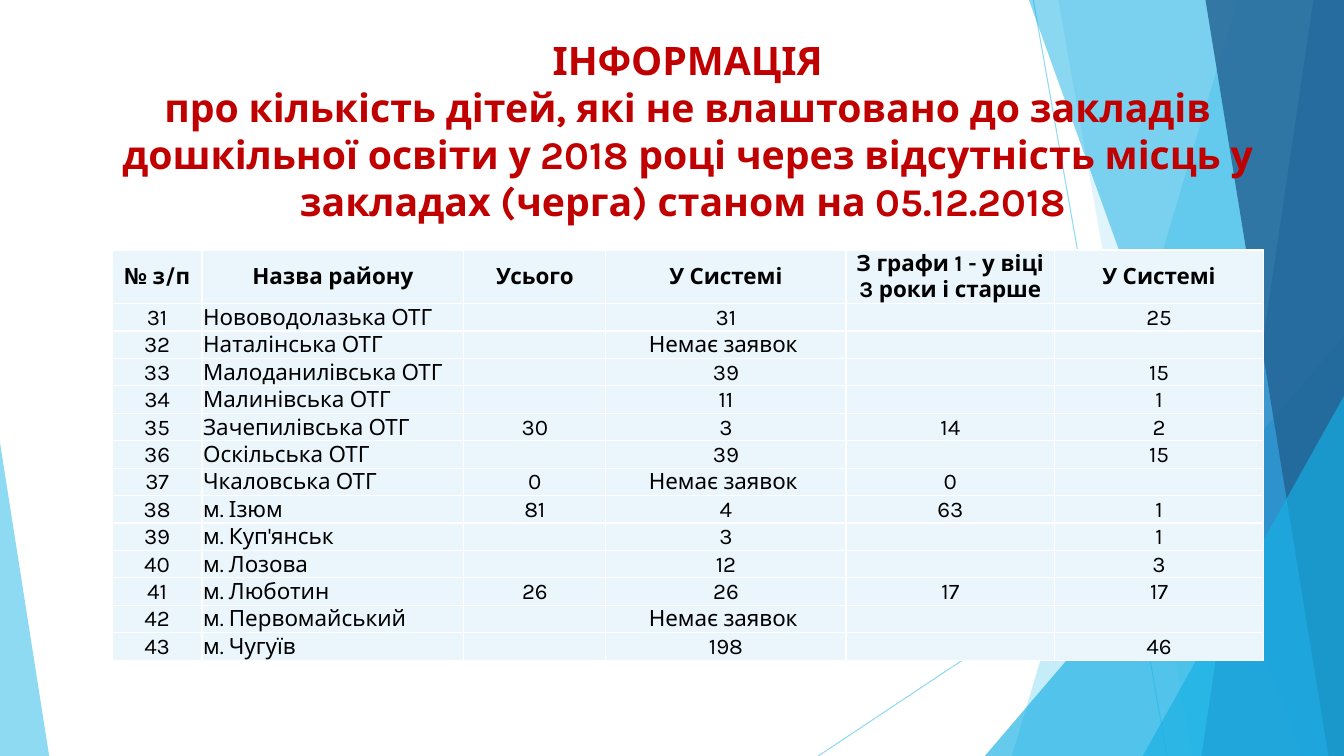
import pptx
import pptx.dml.color
import pptx.enum.shapes
import pptx.enum.text
import pptx.oxml
import pptx.oxml.ns
import pptx.util
from pptx.util import Cm

RGBColor = pptx.dml.color.RGBColor
PP_ALIGN = pptx.enum.text.PP_ALIGN
ANCHOR = pptx.enum.text.MSO_ANCHOR
qn = pptx.oxml.ns.qn

SKY = RGBColor(0x5F, 0xCB, 0xEF)
CYAN = RGBColor(0x17, 0xB0, 0xE4)
BLUE = RGBColor(0x2E, 0x83, 0xC3)
NAVY = RGBColor(0x22, 0x62, 0x92)
RED = RGBColor(0xC0, 0x00, 0x00)
BLACK = RGBColor(0x00, 0x00, 0x00)
PALE = RGBColor(0xEA, 0xF6, 0xFC)
FONT = "Karla"
WIDTH, HEIGHT = 33.87, 19.05  # cm

TITLE = ("ІНФОРМАЦІЯ\vпро кількість дітей, які не влаштовано до закладів "
         "дошкільної освіти у 2018 році через відсутність місць у "
         "закладах (черга) станом на 05.12.2018 ")
HEADER = ["№ з/п", "Назва району", "Усього", "У Системі",
          "З графи 1 - у віці 3 роки і старше", "У Системі"]
NONE = "Немає заявок "
FIRST_NUMBER = 31
DISTRICTS = [
    ("Нововодолазька ОТГ", "", "31", "", "25"),
    ("Наталінська ОТГ", "", NONE, "", ""),
    ("Малоданилівська ОТГ", "", "39", "", "15"),
    ("Малинівська ОТГ", "", "11", "", "1"),
    ("Зачепилівська ОТГ", "30", "3", "14", "2"),
    ("Оскільська ОТГ", "", "39", "", "15"),
    ("Чкаловська ОТГ", "0", NONE, "0", ""),
    ("м. Ізюм", "81", "4", "63", "1"),
    ("м. Куп'янськ", "", "3", "", "1"),
    ("м. Лозова", "", "12", "", "3"),
    ("м. Люботин", "26", "26", "17", "17"),
    ("м. Первомайський", "", NONE, "", ""),
    ("м. Чугуїв", "", "198", "", "46"),
]
COLUMNS = [2.26, 6.6, 3.58, 6.05, 5.26, 5.26]
HEADER_HEIGHT, ROW_HEIGHT = 1.35, 0.69


def write(tf, text, size=16, color=BLACK, bold=False, align=PP_ALIGN.CENTER):
    p = tf.paragraphs[0]
    p.text = text
    p.alignment = align
    for r in p.runs:
        r.font.name = FONT
        r.font.size = pptx.util.Pt(size)
        r.font.bold = bold
        r.font.color.rgb = color
    # Line breaks and empty cells take their height from these sizes
    for br in p._p.findall(qn("a:br")):
        br.get_or_add_rPr().set("sz", str(size * 100)) if hasattr(
            br, "get_or_add_rPr") else br.append(text_size("a:rPr", size))
    p._p.append(text_size("a:endParaRPr", size))


def text_size(tag, size):
    props = pptx.oxml.parse_xml(f'<{tag} {pptx.oxml.ns.nsdecls("a")} sz="{size * 100}">'
                                f'<a:latin typeface="{FONT}"/></{tag}>')
    return props


def set_alpha(fmt_element, percent):
    color = next(fmt_element.iter(qn("a:srgbClr")))
    alpha = color.makeelement(qn("a:alpha"), {"val": str(percent * 1000)})
    color.append(alpha)


def paint(sp, color, percent):
    sp.shadow.inherit = False
    sp.fill.solid()
    sp.fill.fore_color.rgb = color
    set_alpha(sp._element.spPr, percent)
    sp.line.fill.background()


def add_line(s, x1, y1, x2, y2):
    line = s.shapes.add_connector(pptx.enum.shapes.MSO_CONNECTOR.STRAIGHT,
                                  Cm(x1), Cm(y1), Cm(x2), Cm(y2))
    line.line.color.rgb = SKY
    line.line.width = pptx.util.Pt(0.75)
    spPr = line._element.spPr
    set_alpha(spPr, 70)
    spPr.append(spPr.makeelement(qn("a:effectLst"), {}))


def add_band(s, top_x, bottom_x, color, percent):
    """Full-height band from a slanted left side to the right slide edge."""
    builder = s.shapes.build_freeform(Cm(top_x), 0)
    builder.add_line_segments([(Cm(WIDTH), 0), (Cm(WIDTH), Cm(HEIGHT)),
                               (Cm(bottom_x), Cm(HEIGHT))], close=True)
    paint(builder.convert_to_shape(), color, percent)


def add_triangle(s, left, top, width, tip, color, percent):
    sp = s.shapes.add_shape(pptx.enum.shapes.MSO_SHAPE.ISOSCELES_TRIANGLE,
                            Cm(left), Cm(top), Cm(width), Cm(HEIGHT - top))
    sp.adjustments[0] = tip
    paint(sp, color, percent)


def add_decoration(s):
    add_line(s, 26.04, 0, 29.41, HEIGHT)
    add_line(s, WIDTH, 10.24, 20.62, HEIGHT)
    add_band(s, 31.19, 25.5, SKY, 36)
    add_band(s, 26.67, 30.05, SKY, 20)
    add_triangle(s, 24.82, 8.46, 9.05, 1, CYAN, 66)
    add_band(s, 25.93, 32.79, CYAN, 50)
    add_band(s, 33.1, 30.28, BLUE, 70)
    add_band(s, 30.38, 33.48, NAVY, 80)
    add_triangle(s, 28.8, 9.98, 5.07, 1, CYAN, 66)
    add_triangle(s, 0, 11.15, 1.24, 0, SKY, 70)


def add_title(s):
    title = s.shapes.title
    title.left, title.top = Cm(1.57), Cm(0.79)
    title.width, title.height = Cm(31.52), Cm(3.66)
    tf = title.text_frame
    tf.word_wrap = True
    tf.auto_size = pptx.enum.text.MSO_AUTO_SIZE.NONE
    tf.vertical_anchor = ANCHOR.TOP
    write(tf, TITLE, size=28, color=RED, bold=True)
    s.shapes._spTree.append(title._element)  # in front of the decoration


def format_cell(cell):
    cell.margin_left = cell.margin_right = cell.margin_top = Cm(0.03)
    cell.margin_bottom = 0
    cell.vertical_anchor = ANCHOR.MIDDLE
    cell.fill.solid()
    cell.fill.fore_color.rgb = PALE
    tcPr = cell._tc.get_or_add_tcPr()
    for i, side in enumerate("LRTB"):
        tcPr.insert(i, pptx.oxml.parse_xml(
            f'<a:ln{side} {pptx.oxml.ns.nsdecls("a")} w="12700"><a:solidFill>'
            f'<a:srgbClr val="FFFFFF"/></a:solidFill></a:ln{side}>'))


def add_district_table(s):
    rows = [HEADER] + [(str(n), *d) for n, d in enumerate(DISTRICTS, FIRST_NUMBER)]
    heights = [HEADER_HEIGHT] + [ROW_HEIGHT] * len(DISTRICTS)
    table = s.shapes.add_table(len(rows), len(COLUMNS), Cm(2.83), Cm(6.3),
                               Cm(sum(COLUMNS)), Cm(sum(heights))).table
    for column, width in zip(table.columns, COLUMNS):
        column.width = Cm(width)
    for i, (row, height) in enumerate(zip(rows, heights)):
        table.rows[i].height = Cm(height)
        for j, text in enumerate(row):
            cell = table.cell(i, j)
            format_cell(cell)
            is_name = i > 0 and j == 1
            write(cell.text_frame, text, bold=i == 0,
                  align=PP_ALIGN.LEFT if is_name else PP_ALIGN.CENTER)


def main():
    prs = pptx.Presentation()
    prs.slide_width, prs.slide_height = Cm(WIDTH), Cm(HEIGHT)
    s = prs.slides.add_slide(prs.slide_layouts[5])
    add_decoration(s)
    add_title(s)
    add_district_table(s)
    prs.save("out.pptx")


if __name__ == "__main__":
    main()
